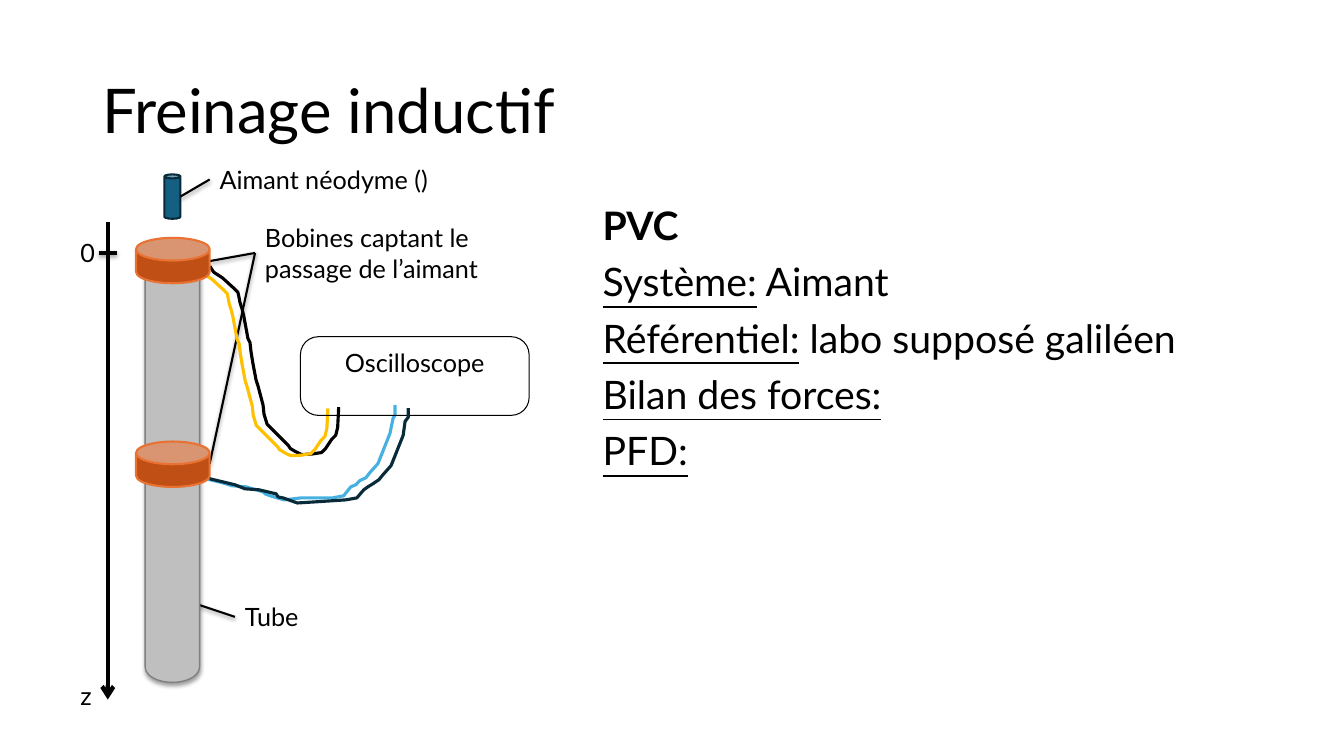
from dataclasses import dataclass
from typing import Optional

from lxml import etree
from pptx import Presentation
from pptx import util as u
from pptx.dml.color import RGBColor
from pptx.enum import shapes, text
from pptx.oxml import ns

FONT = "Lato"
COLOURS = {
    "black": "000000", "tube": "BFBFBF", "tube edge": "808080",
    "coil": "C04F15", "coil edge": "E97132", "magnet": "156082",
    "navy": "092A39", "yellow": "FFC000", "blue": "46B1E1",
}
LABEL_SIZE = 18
COIL_X, COIL_WIDTH, COIL_HEIGHT = 97.2, 52.6, 32.4
COIL_TOPS = (169.9, 315.4)
AXIS_X, ORIGIN_Y = 77, 180.7

Point = tuple[float, float]


@dataclass
class Span:
    words: str
    bold: bool = False
    underline: bool = False


@dataclass
class Label:
    words: str
    left: float
    top: float
    width: float
    height: float = 28.8


@dataclass
class Can:
    left: float
    top: float
    width: float
    height: float
    bend: float
    fill: str
    edge: str
    edge_width: float = 1.5
    shadow: bool = False


@dataclass
class Line:
    start: Point
    end: Point
    width: float = 1.5
    shadow: bool = True
    arrow: bool = False


@dataclass
class Wire:
    colour: str
    points: list[Point]


def colour(name: str) -> RGBColor:
    return RGBColor.from_string(COLOURS[name])


def add_effects(shape, shadow: bool) -> None:
    """Set an explicit effect list, with a soft shadow below if asked for."""
    properties = shape._element.spPr
    effects = properties.find(ns.qn("a:effectLst"))
    if effects is None:
        effects = etree.SubElement(properties, ns.qn("a:effectLst"))
    if shadow:
        outer = etree.SubElement(
            effects, ns.qn("a:outerShdw"), blurRad=str(u.Pt(3.1)),
            dist=str(u.Pt(1.6)), dir="5400000", rotWithShape="0")
        black = etree.SubElement(outer, ns.qn("a:srgbClr"), val=COLOURS["black"])
        etree.SubElement(black, ns.qn("a:alpha"), val="38000")


def add_span(para, span: Span, size: float) -> None:
    run = para.add_run()
    run.text = span.words
    run.font.name = FONT
    run.font.size = u.Pt(size)
    run.font.bold = span.bold
    run.font.underline = span.underline
    run.font.color.rgb = colour("black")


def add_text(page, label: Label, paras: list[list[Span]], size: float,
             spacing: float = 1.0, anchor=text.MSO_ANCHOR.TOP) -> None:
    box = page.shapes.add_textbox(u.Pt(label.left), u.Pt(label.top),
                                  u.Pt(label.width), u.Pt(label.height))
    frame = box.text_frame
    frame.word_wrap = True
    frame.vertical_anchor = anchor
    for index, spans in enumerate(paras):
        para = frame.add_paragraph() if index else frame.paragraphs[0]
        para.line_spacing = spacing
        para.space_before = u.Pt(10 if index else 0)
        for span in spans:
            add_span(para, span, size)


def add_label(page, label: Label) -> None:
    add_text(page, label, [[Span(label.words)]], LABEL_SIZE)


def add_can(page, can: Can) -> None:
    shape = page.shapes.add_shape(
        shapes.MSO_SHAPE.CAN, u.Pt(can.left), u.Pt(can.top),
        u.Pt(can.width), u.Pt(can.height))
    shape.adjustments[0] = can.bend
    shape.fill.solid()
    shape.fill.fore_color.rgb = colour(can.fill)
    shape.line.color.rgb = colour(can.edge)
    shape.line.width = u.Pt(can.edge_width)
    shape.shadow.inherit = False
    add_effects(shape, can.shadow)


def add_line(page, line: Line) -> None:
    connector = page.shapes.add_connector(
        shapes.MSO_CONNECTOR.STRAIGHT, *map(u.Pt, line.start + line.end))
    connector.line.color.rgb = colour("black")
    connector.line.width = u.Pt(line.width)
    if line.arrow:
        etree.SubElement(connector.line._get_or_add_ln(), ns.qn("a:tailEnd"), type="arrow")
    add_effects(connector, line.shadow)


def add_wire(page, wire: Wire) -> None:
    points = [(u.Pt(x), u.Pt(y)) for x, y in wire.points]
    builder = page.shapes.build_freeform(*points[0])
    builder.add_line_segments(points[1:], close=False)
    shape = builder.convert_to_shape()
    shape.fill.background()
    shape.line.color.rgb = colour(wire.colour)
    shape.line.width = u.Pt(2.25)
    shape.shadow.inherit = False


def add_oscilloscope(page) -> None:
    shape = page.shapes.add_shape(shapes.MSO_SHAPE.ROUNDED_RECTANGLE,
                                  u.Pt(214.6), u.Pt(240.5), u.Pt(163.4), u.Pt(56.2))
    shape.adjustments[0] = 0.228
    shape.fill.background()
    shape.line.color.rgb = colour("black")
    shape.line.width = u.Pt(0.75)
    shape.shadow.inherit = False
    shape.text_frame.vertical_anchor = text.MSO_ANCHOR.TOP
    para = shape.text_frame.paragraphs[0]
    para.alignment = text.PP_ALIGN.CENTER
    add_span(para, Span("Oscilloscope"), LABEL_SIZE)


# Wires from the coils to the oscilloscope
UPPER_PATH = [
    (149.8, 190.1), (152.6, 194.4), (157, 197.3), (159.1, 198.7), (167, 205.9),
    (169.9, 208.8), (170.6, 211.7), (171.4, 216), (172.8, 220.3), (174.2, 226.1),
    (177.1, 241.9), (178.6, 244.8), (179.3, 251.3), (180.7, 259.9), (182.9, 271.4),
    (184.3, 275.8), (187.9, 289.4), (188.6, 295.9), (190.8, 303.1), (194.4, 306.7),
    (202.3, 314.6), (205.9, 318.2), (207.4, 320.4), (211, 322.6), (215.3, 324.7),
    (222.5, 324.4), (229.7, 323.3), (232.6, 320.4), (236.9, 313.9), (239.8, 311),
    (241.2, 305.3), (241.9, 290.9)]
BLUE_PATH = [
    (141.1, 340.6), (159.1, 344.9), (165.6, 347), (175.7, 347.8), (187.9, 351.4),
    (189.4, 352.8), (193, 354.2), (203, 357.1), (215, 355.7), (237.6, 355.7),
    (245.5, 354.2), (250.6, 347.8), (254.2, 346.3), (257, 343.4), (261.4, 341.3),
    (264.2, 337.7), (270, 331.2), (278.6, 309.6), (280.8, 298.8), (282.2, 296.6),
    (282.2, 289.4)]
NAVY_PATH = [
    (149.8, 342), (167.8, 346.3), (175, 349.2), (185, 349.9), (197.3, 352.8),
    (198.7, 355), (202.3, 355.7), (212.4, 359.3), (224, 358.6), (247, 357.1),
    (254.9, 355.7), (259.9, 349.9), (262.8, 347.8), (266.4, 345.6), (270.7, 342.7),
    (273.6, 339.1), (279.4, 332.6), (288, 311), (289.4, 301), (291.6, 298.1),
    (291.6, 291.6)]


def main() -> None:
    deck = Presentation()
    deck.slide_width, deck.slide_height = u.Pt(960), u.Pt(540)
    page = deck.slides.add_slide(deck.slide_layouts[6])

    # Title and analysis
    add_text(page, Label("", 66, 28.8, 828, 104.4), [[Span("Freinage inductif")]],
             44, 0.9, text.MSO_ANCHOR.MIDDLE)
    add_text(page, Label("", 423.4, 144, 470.9, 342.7), [
        [Span("PVC", bold=True)],
        [Span("Système:", underline=True), Span(" Aimant")],
        [Span("Référentiel:", underline=True), Span(" labo supposé galiléen")],
        [Span("Bilan des forces:", underline=True)],
        [Span("PFD:", underline=True)],
    ], 28, 0.9)

    # Tube and z axis
    add_line(page, Line((167.8, 440.6), (135.4, 429.8)))
    add_can(page, Can(103.7, 169.9, 38.9, 317.5, 0.561, "tube", "tube edge", 1, True))
    add_line(page, Line((AXIS_X, 158.4), (AXIS_X, 499.7), 3, shadow=False, arrow=True))
    add_line(page, Line((AXIS_X + 6.5, ORIGIN_Y), (AXIS_X - 6.5, ORIGIN_Y), 3))

    # Wires, leaders and coils
    add_wire(page, Wire("black", UPPER_PATH))
    for leader_end in (186.5, 331.2):
        add_line(page, Line((182.2, ORIGIN_Y), (149.8, leader_end)))
    add_wire(page, Wire("yellow", [(x - 7.7, y + 0.8) for x, y in UPPER_PATH]))
    add_wire(page, Wire("blue", BLUE_PATH))
    for top in COIL_TOPS:
        add_can(page, Can(COIL_X, top, COIL_WIDTH, COIL_HEIGHT, 0.561, "coil", "coil edge"))
    add_oscilloscope(page)
    add_wire(page, Wire("navy", NAVY_PATH))

    # Magnet
    add_can(page, Can(117.4, 124.6, 11.5, 31.7, 0.25, "magnet", "navy"))
    add_line(page, Line((149.8, 128.2), (128.9, 140.4)))

    # Labels
    for label in (
        Label("0", 50.4, 166.3, 22.3),
        Label("z", 50.4, 482.4, 22.3),
        Label("Bobines captant le passage de l’aimant", 182.2, 155.5, 182.9, 51.1),
        Label("Aimant néodyme ()", 149.8, 113.8, 190.8),
        Label("Tube", 167.8, 426.2, 190.8),
    ):
        add_label(page, label)

    deck.save("out.pptx")


if __name__ == "__main__":
    main()
